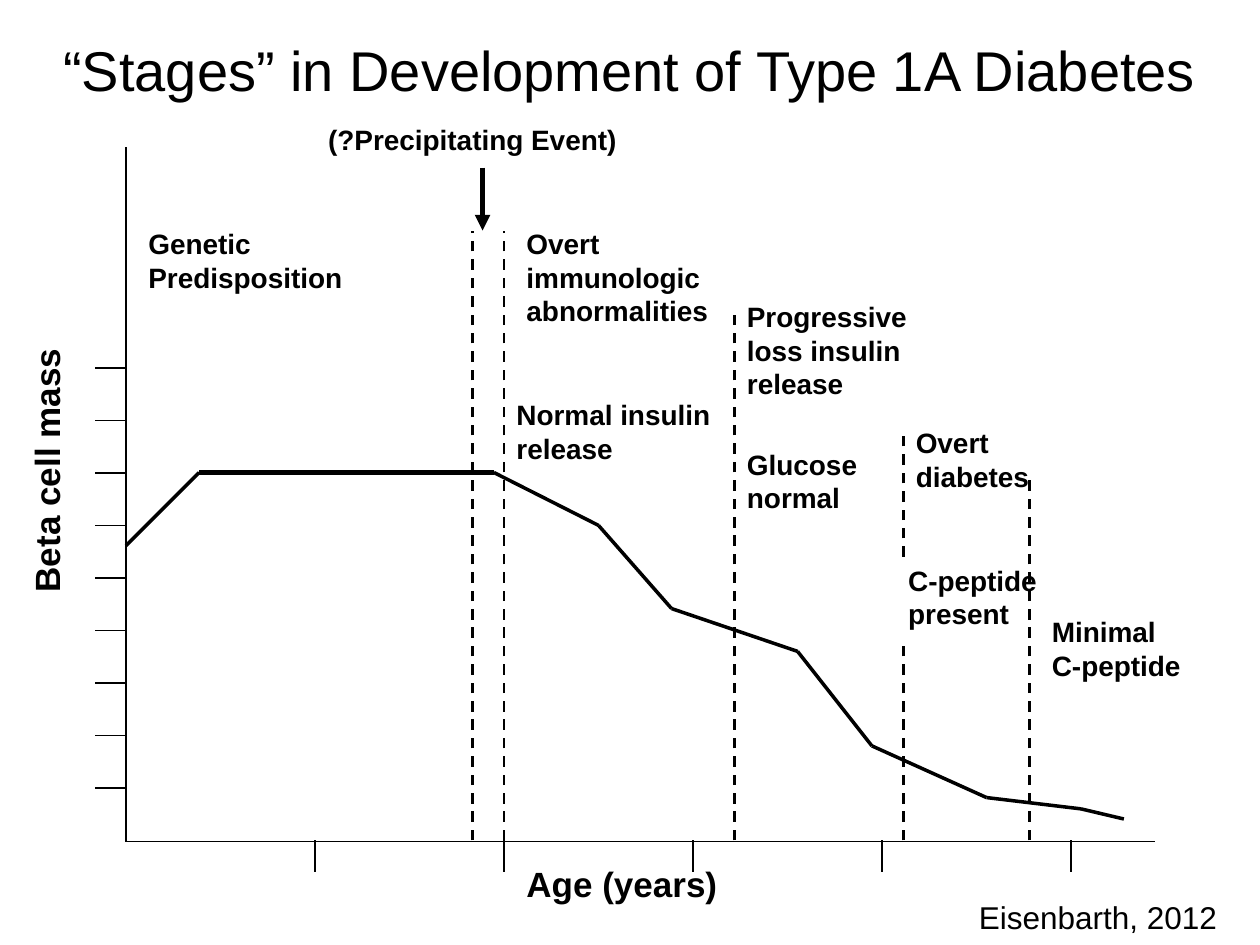
from itertools import pairwise

from lxml import etree
from pptx import Presentation
from pptx.dml.color import RGBColor
from pptx.enum.dml import MSO_LINE
from pptx.enum.shapes import MSO_CONNECTOR
from pptx.enum.text import MSO_ANCHOR, PP_ALIGN
from pptx.oxml.ns import qn
from pptx.util import Inches, Pt

BLACK = RGBColor(0, 0, 0)
WHITE = RGBColor(255, 255, 255)

AXIS_X, AXIS_Y = 1, 6.68
DASH_BOTTOM = 6.67

# (left, top, width, height, lines)
STAGE_LABELS = [
    (1.08, 1.75, 1.74, 0.64, ["Genetic", "Predisposition"]),
    (4.08, 1.75, 1.65, 0.9, ["Overt", "immunologic", "abnormalities"]),
    (4, 3.11, 1.75, 0.64, ["Normal insulin", "release"]),
    (5.83, 2.33, 1.47, 0.9, ["Progressive", "loss insulin", "release"]),
    (5.83, 3.5, 1.08, 0.64, ["Glucose", "normal"]),
    (7.17, 3.33, 1.1, 0.64, ["Overt", "diabetes"]),
    (7.11, 4.42, 1.23, 0.64, ["C-peptide", "present"]),
    (8.25, 4.83, 1.23, 0.64, ["Minimal", "C-peptide"]),
]

# (x, bottom, top)
STAGE_BOUNDARIES = [
    (3.75, DASH_BOTTOM, 1.83),
    (4, DASH_BOTTOM, 1.83),
    (5.83, DASH_BOTTOM, 2.5),
    (7.17, DASH_BOTTOM, 5.08),
    (7.17, 4.42, 3.42),
    (8.17, DASH_BOTTOM, 3.75),
]

RISE = [(1, 4.33), (1.58, 3.75)]
PLATEAU = [(1.58, 3.75), (3.92, 3.75)]
DECLINE = [(3.92, 3.75), (4.75, 4.17), (5.33, 4.83), (6.33, 5.17),
           (6.92, 5.92), (7.83, 6.33), (8.58, 6.42), (8.92, 6.5)]


class SlideWriter:
    """Holds the text style and the slide being drawn."""

    font_name = "Arial"
    color = BLACK

    def __init__(self, page):
        self.page = page
        fill = page.background.fill
        fill.solid()
        fill.fore_color.rgb = WHITE

    def text(self, left, top, width, height, lines, size=16, bold=True,
             align=PP_ALIGN.LEFT, anchor=MSO_ANCHOR.TOP, wrap=False, rotation=0):
        box = self.page.shapes.add_textbox(
            Inches(left), Inches(top), Inches(width), Inches(height))
        box.rotation = rotation
        frame = box.text_frame
        frame.word_wrap = wrap
        frame.vertical_anchor = anchor
        for index, line in enumerate(lines):
            para = frame.add_paragraph() if index else frame.paragraphs[0]
            para.alignment = align
            span = para.add_run()
            span.text = line
            span.font.name = self.font_name
            span.font.size = Pt(size)
            span.font.bold = bold
            span.font.color.rgb = self.color

    def line(self, start, end, width=0.75, dashed=False, arrow=False):
        connector = self.page.shapes.add_connector(
            MSO_CONNECTOR.STRAIGHT, *map(Inches, (*start, *end)))
        connector.line.color.rgb = self.color
        connector.line.width = Pt(width)
        if dashed:
            connector.line.dash_style = MSO_LINE.DASH
        properties = connector._element.spPr
        if arrow:
            outline = properties.find(qn("a:ln"))
            etree.SubElement(outline, qn("a:tailEnd"), type="triangle")
        etree.SubElement(properties, qn("a:effectLst"))

    def open_path(self, points, width):
        start, *rest = [(Inches(x), Inches(y)) for x, y in points]
        builder = self.page.shapes.build_freeform(*start)
        builder.add_line_segments(rest, close=False)
        shape = builder.convert_to_shape()
        shape.shadow.inherit = False
        shape.fill.background()
        shape.line.color.rgb = self.color
        shape.line.width = Pt(width)


def draw_axes(writer):
    writer.line((AXIS_X, 1.17), (AXIS_X, AXIS_Y))
    writer.line((AXIS_X, AXIS_Y), (9.17, AXIS_Y))
    for index in range(5):
        x = 2.5 + 1.5 * index
        writer.line((x, 6.67), (x, 6.92))
    for index in range(9):
        y = 2.92 + 1.25 / 3 * index
        writer.line((AXIS_X, y), (AXIS_X - 0.25, y))
    writer.text(4.08, 6.8, 1.73, 0.44, ["Age (years)"], size=20)
    writer.text(-1.53, 2.68, 3.8, 0.44, ["Beta cell mass"], size=20,
                wrap=True, rotation=270)


def draw_stages(writer):
    for x, bottom, top in STAGE_BOUNDARIES:
        writer.line((x, bottom), (x, top), width=1.5, dashed=True)
    for *place, lines in STAGE_LABELS:
        writer.text(*place, lines, wrap=lines[0] == "Progressive")
    writer.text(2.5, 0.92, 2.5, 0.37, ["(?Precipitating Event)"],
                align=PP_ALIGN.CENTER)
    writer.line((3.83, 1.33), (3.83, 1.83), width=3, arrow=True)


def draw_curve(writer):
    writer.open_path(RISE, width=2)
    writer.line(*PLATEAU, width=3)
    for start, end in pairwise(DECLINE):
        writer.line(start, end, width=2)


def main():
    deck = Presentation()
    deck.slide_width, deck.slide_height = Inches(10), Inches(7.5)
    writer = SlideWriter(deck.slides.add_slide(deck.slide_layouts[6]))
    writer.text(0, 0.17, 10, 0.75, ["“Stages” in Development of Type 1A Diabetes"],
                size=32, bold=False, align=PP_ALIGN.CENTER,
                anchor=MSO_ANCHOR.MIDDLE, wrap=True)
    draw_axes(writer)
    draw_stages(writer)
    draw_curve(writer)
    writer.text(7.67, 7.08, 2.17, 0.42, ["Eisenbarth, 2012"], size=18,
                bold=False, wrap=True)
    deck.save("out.pptx")


if __name__ == "__main__":
    main()
